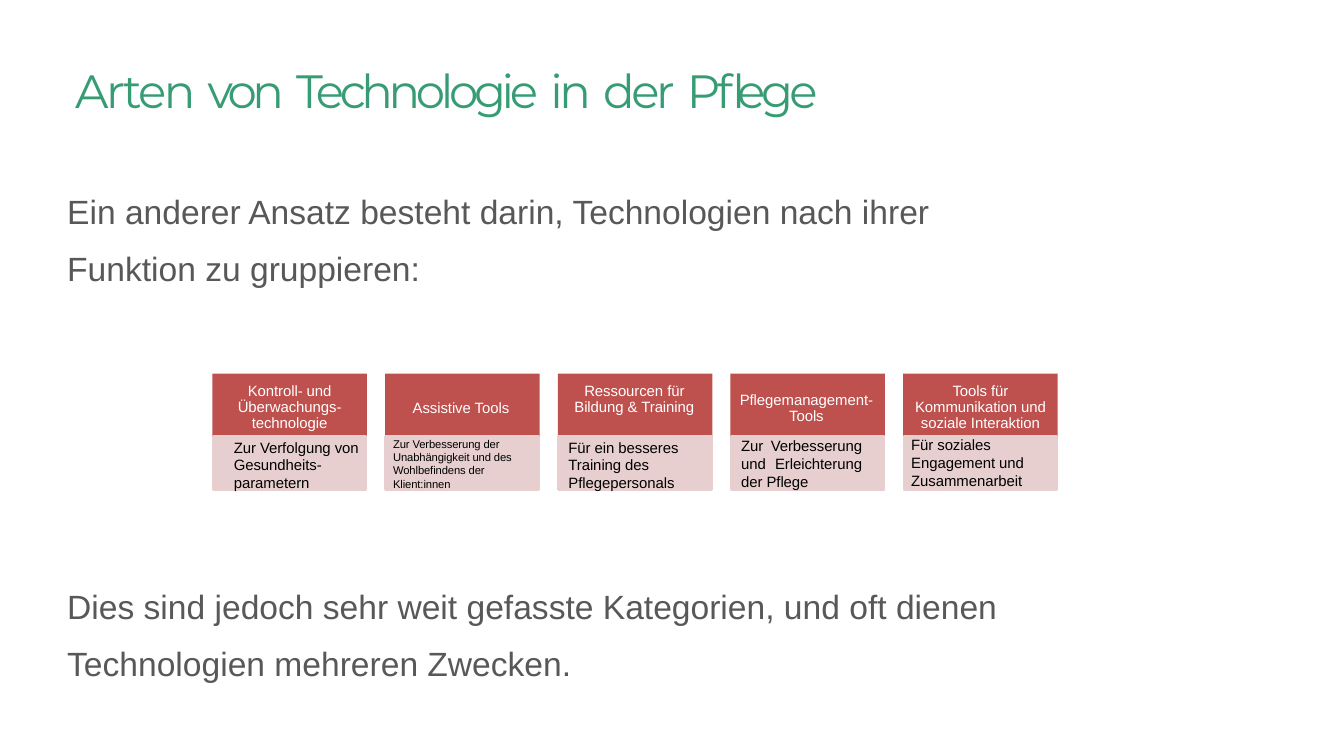
from pptx import Presentation
from pptx.dml.color import RGBColor
from pptx.enum.shapes import MSO_SHAPE
from pptx.enum.text import MSO_ANCHOR, MSO_AUTO_SIZE, PP_ALIGN
from pptx.util import Inches, Pt

RECTANGLE = MSO_SHAPE.RECTANGLE
TOP = MSO_ANCHOR.TOP
NO_AUTOFIT = MSO_AUTO_SIZE.NONE
LEFT, CENTER, JUSTIFY = PP_ALIGN.LEFT, PP_ALIGN.CENTER, PP_ALIGN.JUSTIFY

THEME = {
    "title": RGBColor(0x37, 0x9C, 0x73),
    "body": RGBColor(0x58, 0x58, 0x58),
    "header": RGBColor(0xBE, 0x50, 0x4D),
    "card": RGBColor(0xE7, 0xCF, 0xCF),
    "white": RGBColor(0xFF, 0xFF, 0xFF),
    "black": RGBColor(0, 0, 0),
    "title_font": "Montserrat",
    "font": "Arial",
    "title_size": 25,
    "body_size": 18,
    "card_size": 8,
    "small_size": 6,
}

# Column grid of the category cards, in inches
FIRST_LEFT, LAST_LEFT, COLUMNS = 1.59, 6.73, 5
COLUMN_STEP = (LAST_LEFT - FIRST_LEFT) / (COLUMNS - 1)
CARD_WIDTH, CARD_TOP, CARD_HEIGHT = 1.13, 3.25, 0.39
HEADER_TOP, HEADER_HEIGHT, HEADER_OVERHANG = 2.78, 0.49, 0.01


def set_frame(shape, left=0, top=0, right=0):
    frame = shape.text_frame
    frame.word_wrap = True
    frame.auto_size = NO_AUTOFIT
    frame.vertical_anchor = TOP
    frame.margin_left, frame.margin_top = Inches(left), Inches(top)
    frame.margin_right, frame.margin_bottom = Inches(right), 0
    return frame.paragraphs[0]


def format_run(run, size, color, spacing, font=THEME["font"]):
    run.font.name = font
    run.font.size = Pt(size)
    run.font.color.rgb = color
    run.font._element.set("spc", str(round(spacing * 100)))


presentation = Presentation()
presentation.slide_width = Inches(10)
presentation.slide_height = presentation.slide_width * 9 // 16
slide = presentation.slides.add_slide(presentation.slide_layouts[3])
title, intro, closing = slide.placeholders

# Title: letters are tightened word by word, the gaps between words are not
title.left, title.top = Inches(0.55), Inches(0.45)
title.width, title.height = Inches(8.9), Inches(0.44)
paragraph = set_frame(title, left=0.01, top=0.01)
paragraph.alignment = LEFT
for text, spacing in [("Arten", -1.4), (" ", 0), ("von", -2.4), (" ", 0),
                      ("Technologie", -2.3), (" ", 0), ("in", -1.9), (" ", 0),
                      ("der", -1.8), (" ", 0), ("Pflege", -2.1)]:
    run = paragraph.add_run()
    run.text = text
    format_run(run, THEME["title_size"], THEME["title"], spacing, THEME["title_font"])

# Sentences above and below the cards
for placeholder, top, sentence in [
    (intro, 1.29, "Ein anderer Ansatz besteht darin, Technologien nach ihrer Funktion zu gruppieren:"),
    (closing, 4.23, "Dies sind jedoch sehr weit gefasste Kategorien, und oft dienen Technologien mehreren Zwecken."),
]:
    placeholder.left, placeholder.top = Inches(0.48), Inches(top)
    placeholder.width, placeholder.height = Inches(7.1), Inches(0.87)
    paragraph = set_frame(placeholder, left=0.02, top=0.01)
    paragraph.text = sentence
    paragraph.line_spacing = 1.41
    paragraph.space_before = Pt(0)
    properties = paragraph._p.get_or_add_pPr()
    properties.set("marL", "0")
    properties.set("indent", "0")
    properties.append(properties.makeelement(
        "{http://schemas.openxmlformats.org/drawingml/2006/main}buNone", {}))
    format_run(paragraph.runs[0], THEME["body_size"], THEME["body"], 0)

# Cards: header, its left, top and right insets, text, size, alignment, text insets
regular, small = THEME["card_size"], THEME["small_size"]
cards = [
    ("Kontroll- und Überwachungs- technologie", (0.17, 0.07, 0.17),
     "Zur Verfolgung von Gesundheits- parametern", regular, LEFT, (0.15, 0.01, 0.02)),
    ("Assistive Tools", (0.06, 0.2, 0.08),
     "Zur Verbesserung der Unabhängigkeit und des Wohlbefindens der Klient:innen",
     small, LEFT, (0.05, 0, 0.1)),
    ("Ressourcen für Bildung & Training", (0.07, 0.07, 0.08),
     "Für ein besseres Training des Pflegepersonals", regular, LEFT, (0.07, 0.01, 0.1)),
    ("Pflegemanagement- Tools", (0.04, 0.14, 0.06),
     "Zur Verbesserung und Erleichterung der Pflege", regular, JUSTIFY, (0.07, 0, 0.16)),
    ("Tools für Kommunikation und soziale Interaktion", (0.06, 0.07, 0.06),
     "Für soziales Engagement und Zusammenarbeit", regular, LEFT, (0.05, -0.01, 0.1)),
]
for column, (heading, heading_insets, text, size, alignment, insets) in enumerate(cards):
    left = FIRST_LEFT + column * COLUMN_STEP

    header = slide.shapes.add_shape(
        RECTANGLE, Inches(left - HEADER_OVERHANG), Inches(HEADER_TOP),
        Inches(CARD_WIDTH + 2 * HEADER_OVERHANG), Inches(HEADER_HEIGHT))
    header.shadow.inherit = False
    header.fill.solid()
    header.fill.fore_color.rgb = THEME["header"]
    header.line.fill.background()
    paragraph = set_frame(header, *heading_insets)
    paragraph.text = heading
    paragraph.alignment = CENTER
    paragraph.line_spacing = Pt(8.6)
    format_run(paragraph.runs[0], regular, THEME["white"], -0.05)

    card = slide.shapes.add_shape(
        RECTANGLE, Inches(left), Inches(CARD_TOP), Inches(CARD_WIDTH), Inches(CARD_HEIGHT))
    card.shadow.inherit = False
    card.fill.solid()
    card.fill.fore_color.rgb = THEME["card"]
    card.line.color.rgb = THEME["card"]
    card.line.width = Pt(2)
    paragraph = set_frame(card, *insets)
    paragraph.text = text
    paragraph.alignment = alignment
    format_run(paragraph.runs[0], size, THEME["black"], -0.05)

presentation.save("out.pptx")
